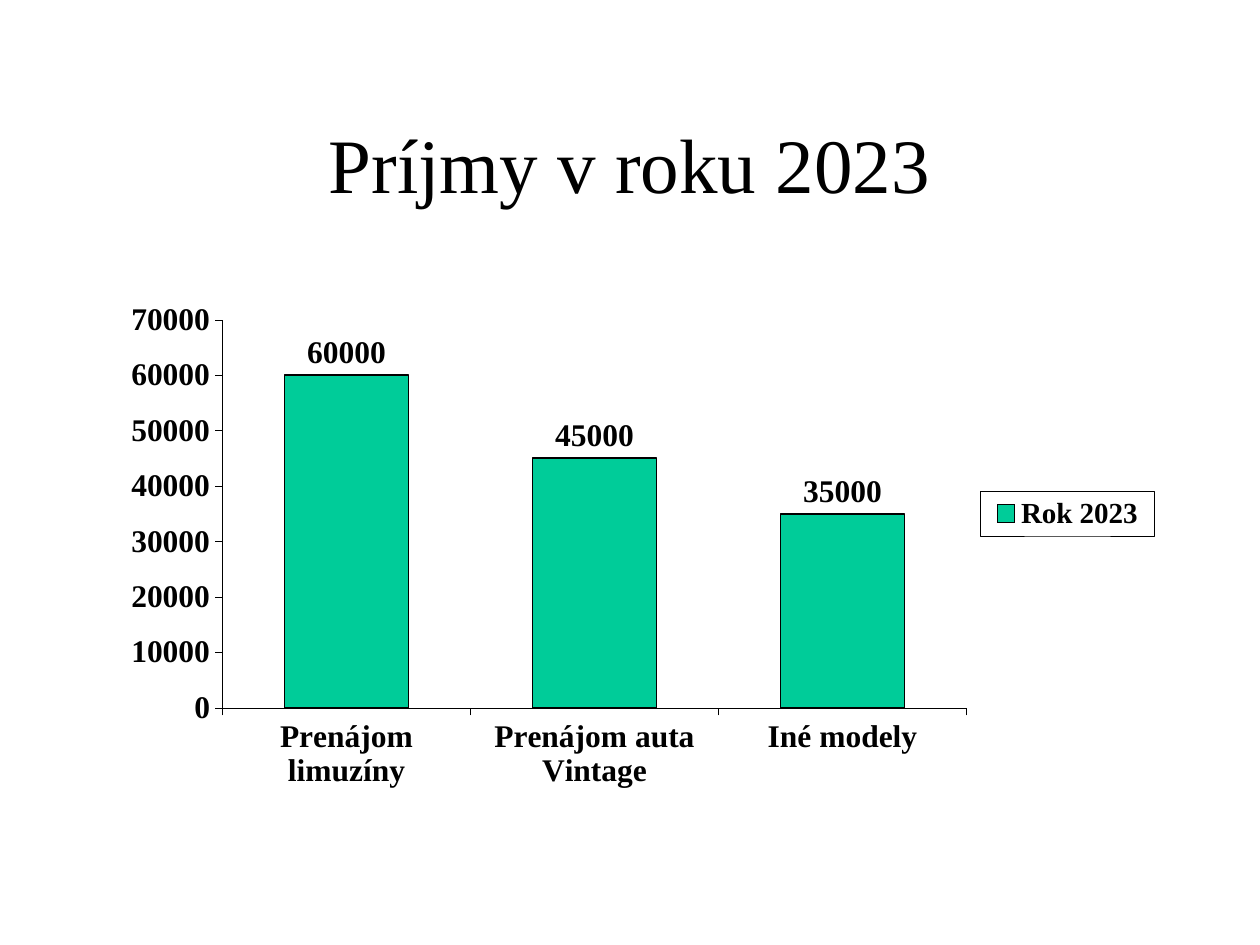
from lxml import etree
from pptx import Presentation
from pptx import util as u
from pptx.chart.data import CategoryChartData
from pptx.dml.color import RGBColor
from pptx.enum import chart as ch, text
from pptx.oxml import parse_xml
from pptx.oxml.ns import nsdecls, qn

TITLE = "Príjmy v roku 2023"
SERIES = "Rok 2023"
INCOME = [
    ("Prenájom limuzíny", 60000),
    ("Prenájom auta Vintage", 45000),
    ("Iné modely", 35000),
]
COLORS = {"ink": "000000", "paper": "FFFFFF", "bar": "00CC99"}
FONT = "Times New Roman"

# Boxes in px: left, top, width, height
SLIDE = (1260, 945)
TITLE_BOX = (94, 84, 1071, 158)
CHART_BOX = (102, 280, 1057, 553)
PLOT_BOX = (223, 320, 744, 388)
LEGEND_BOX = (980, 491, 174, 45)


def px(n):
    return u.Emu(n * 914400 // 126)


def color(name):
    return RGBColor.from_string(COLORS[name])


def style_font(font, size, bold):
    font.name, font.size, font.bold = FONT, u.Pt(size), bold
    font.color.rgb = color("ink")


def style_line(line, width):
    line.color.rgb = color("ink")
    line.width = u.Pt(width)


def set_layout(parent, index, box, inner=False):
    """Place a chart part by hand, as fractions of the chart box."""
    for old in parent.findall(qn("c:layout")):
        parent.remove(old)
    layout = parse_xml(f"<c:layout {nsdecls('c')}><c:manualLayout/></c:layout>")
    x, y, w, h = box
    left, top, width, height = CHART_BOX
    values = [("layoutTarget", "inner")] if inner else []
    values += [("xMode", "edge"), ("yMode", "edge"),
               ("x", round((x - left) / width, 3)), ("y", round((y - top) / height, 3)),
               ("w", round(w / width, 3)), ("h", round(h / height, 3))]
    for tag, value in values:
        etree.SubElement(layout[0], qn(f"c:{tag}")).set("val", str(value))
    parent.insert(index, layout)


def add_title(s):
    sp = s.shapes.title
    sp.left, sp.top, sp.width, sp.height = map(px, TITLE_BOX)
    tf = sp.text_frame
    tf.text = TITLE
    tf.vertical_anchor = text.MSO_ANCHOR.MIDDLE
    p = tf.paragraphs[0]
    p.alignment = text.PP_ALIGN.CENTER
    style_font(p.runs[0].font, 44, False)


def add_income_chart(s):
    data = CategoryChartData()
    data.categories = [name for name, _ in INCOME]
    data.add_series(SERIES, [value for _, value in INCOME])
    chart = s.shapes.add_chart(ch.XL_CHART_TYPE.COLUMN_CLUSTERED,
                               *map(px, CHART_BOX), data).chart
    chart.has_title = False
    style_font(chart.font, 18, True)
    set_layout(chart.plots[0]._element.getparent(), 0, PLOT_BOX, inner=True)

    for axis in (chart.category_axis, chart.value_axis):
        axis.has_major_gridlines = False
        axis.major_tick_mark = ch.XL_TICK_MARK.OUTSIDE
        style_font(axis.tick_labels.font, 18, True)
        style_line(axis.format.line, 0.25)
    axis = chart.value_axis
    axis.minimum_scale, axis.maximum_scale, axis.major_unit = 0, 70000, 10000

    plot = chart.plots[0]
    plot.gap_width = 100
    plot.vary_by_categories = False
    bars = plot.series[0]
    bars.format.fill.solid()
    bars.format.fill.fore_color.rgb = color("bar")
    style_line(bars.format.line, 1)
    labels = bars.data_labels
    labels.show_value = True
    labels.position = ch.XL_LABEL_POSITION.OUTSIDE_END
    style_font(labels.font, 18, True)
    add_legend(chart)


def add_legend(chart):
    chart.has_legend = True
    legend = chart.legend
    legend.position = ch.XL_LEGEND_POSITION.RIGHT
    legend.include_in_layout = False
    style_font(legend.font, 16.6, True)
    el = legend._element
    set_layout(el, 1, LEGEND_BOX)
    frame = parse_xml(
        f'<c:spPr {nsdecls("c", "a")}>'
        f'<a:solidFill><a:srgbClr val="{COLORS["paper"]}"/></a:solidFill>'
        f'<a:ln w="3175"><a:solidFill><a:srgbClr val="{COLORS["ink"]}"/></a:solidFill></a:ln>'
        '</c:spPr>')
    el.find(qn("c:overlay")).addnext(frame)


def main():
    prs = Presentation()
    prs.slide_width, prs.slide_height = map(px, SLIDE)
    s = prs.slides.add_slide(prs.slide_layouts[5])
    add_title(s)
    add_income_chart(s)
    prs.save("out.pptx")


if __name__ == "__main__":
    main()
